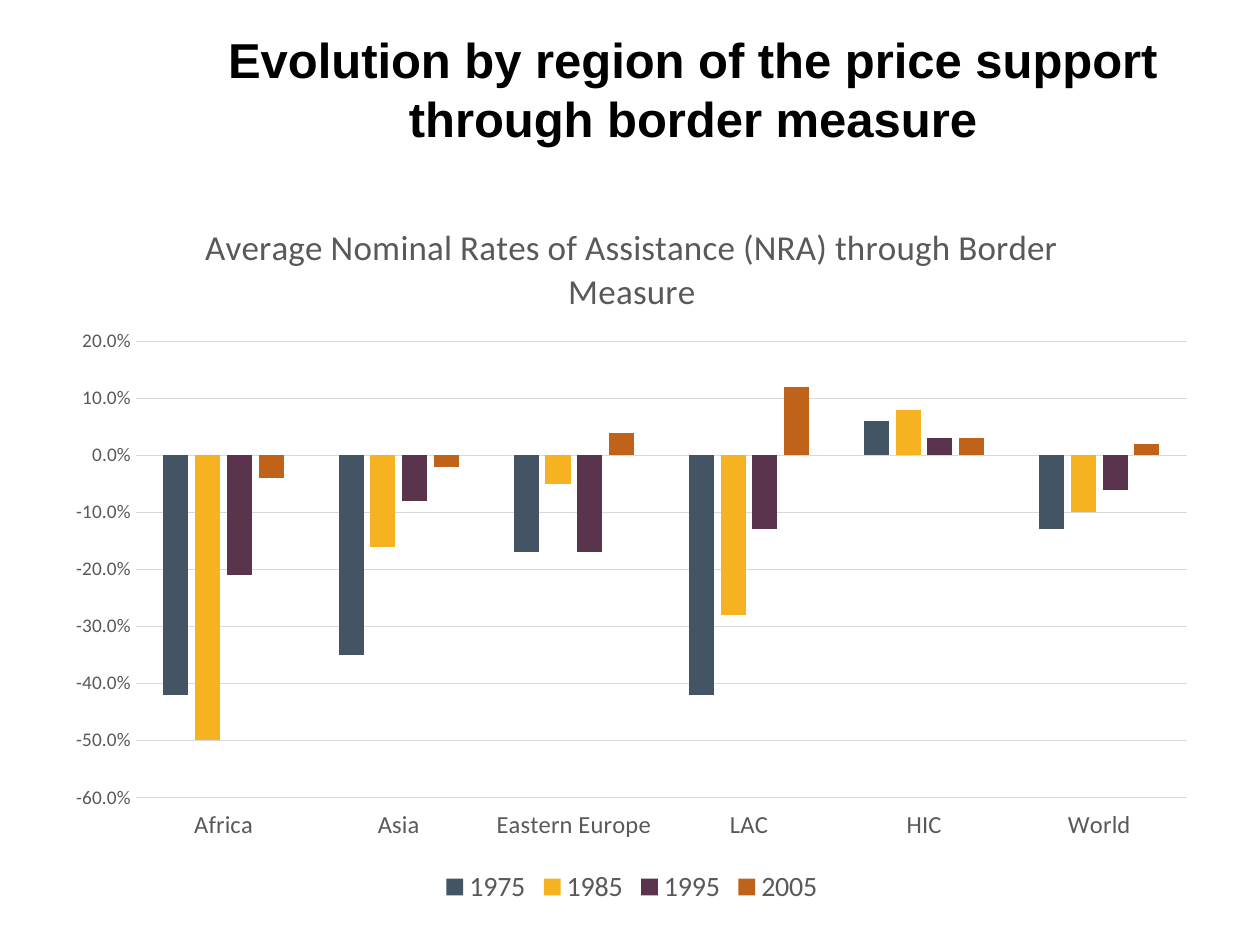
from pptx import Presentation
from pptx.chart.data import CategoryChartData
from pptx.dml.color import RGBColor
from pptx.enum.chart import XL_CHART_TYPE as ChartType, XL_LEGEND_POSITION as LegendPosition
from pptx.enum.chart import XL_TICK_LABEL_POSITION as LabelPosition, XL_TICK_MARK as TickMark
from pptx.enum.text import MSO_ANCHOR as Anchor, PP_ALIGN as Align
from pptx.oxml import parse_xml
from pptx.oxml.ns import nsdecls, qn
from pptx.util import Inches, Pt

BLACK = RGBColor(0x00, 0x00, 0x00)
GREY = RGBColor(0x59, 0x59, 0x59)
RULE = RGBColor(0xD9, 0xD9, 0xD9)
REGIONS = ["Africa", "Asia", "Eastern Europe", "LAC", "HIC", "World"]
ASSISTANCE = [
    ("1975", RGBColor(0x43, 0x54, 0x64), [-0.42, -0.35, -0.17, -0.42, 0.06, -0.13]),
    ("1985", RGBColor(0xF6, 0xB2, 0x21), [-0.5, -0.16, -0.05, -0.28, 0.08, -0.1]),
    ("1995", RGBColor(0x5A, 0x34, 0x4D), [-0.21, -0.08, -0.17, -0.13, 0.03, -0.06]),
    ("2005", RGBColor(0xBF, 0x63, 0x1A), [-0.04, -0.02, 0.04, 0.12, 0.03, 0.02]),
]


def style_font(font, size, color=GREY, name="Calibri", bold=False):
    """Set the size, colour, typeface and weight of a font."""
    font.size, font.name, font.bold = Pt(size), name, bold
    font.color.rgb = color


def style_line(line):
    """Make a chart line a thin light rule."""
    line.color.rgb = RULE
    line.width = Pt(0.75)


def place_title(page, box):
    """Put the heading in the title placeholder, inside the given box."""
    title = page.shapes.title
    title.left, title.top, title.width, title.height = box
    frame = title.text_frame
    frame.word_wrap = True
    frame.vertical_anchor = Anchor.MIDDLE
    frame.margin_left = frame.margin_right = Inches(0.1)
    frame.margin_top = frame.margin_bottom = Inches(0.02)
    frame.text = "Evolution by region of the price support through border measure"
    para = frame.paragraphs[0]
    para.alignment = Align.CENTER
    style_font(para.font, 28, BLACK, "Arial", True)


def style_axes(chart):
    """Format the region axis and the percentage axis."""
    regions, rates = chart.category_axis, chart.value_axis
    for axis, size in ((regions, 14), (rates, 11)):
        axis.major_tick_mark = axis.minor_tick_mark = TickMark.NONE
        style_font(axis.tick_labels.font, size)
    regions.tick_label_position = LabelPosition.LOW
    style_line(regions.format.line)
    rates.minimum_scale, rates.maximum_scale, rates.major_unit = -0.6, 0.2, 0.1
    rates.tick_labels.number_format = "0.0%"
    rates.tick_labels.number_format_is_linked = False
    rates.format.line.fill.background()
    style_line(rates.major_gridlines.format.line)


def fix_plot_area(chart, **shares):
    """Place the inner plot area by shares of the chart's size."""
    area = chart.plots[0]._element.getparent()
    for layout in area.findall(qn("c:layout")):
        area.remove(layout)
    places = "".join(f'<c:{key} val="{share}"/>' for key, share in shares.items())
    area.insert(0, parse_xml(
        f'<c:layout {nsdecls("c")}><c:manualLayout><c:layoutTarget val="inner"/>'
        f'<c:xMode val="edge"/><c:yMode val="edge"/>{places}</c:manualLayout></c:layout>'))


def place_chart(page, box):
    """Draw the clustered columns of assistance by region, inside the given box."""
    data = CategoryChartData(number_format="0.0%")
    data.categories = REGIONS
    for year, _, rates in ASSISTANCE:
        data.add_series(year, rates)
    chart = page.shapes.add_chart(ChartType.COLUMN_CLUSTERED, *box, data).chart
    style_font(chart.font, 10, BLACK)

    chart.has_title = True
    frame = chart.chart_title.text_frame
    frame.text = "Average Nominal Rates of Assistance (NRA) through Border Measure"
    style_font(frame.paragraphs[0].font, 20)
    chart.chart_title.include_in_layout = False

    chart.has_legend = True
    chart.legend.position = LegendPosition.BOTTOM
    chart.legend.include_in_layout = False
    style_font(chart.legend.font, 16)

    plot = chart.plots[0]
    plot.gap_width, plot.overlap, plot.vary_by_categories = 219, -27, False
    for series, (_, color, _) in zip(plot.series, ASSISTANCE):
        series.invert_if_negative = False
        series.format.fill.solid()
        series.format.fill.fore_color.rgb = color
    style_axes(chart)
    _, _, width, height = box
    fix_plot_area(chart, x=Inches(0.66) / width, y=Inches(1.16) / height,
                  w=Inches(8.34) / width, h=Inches(3.62) / height)


def main():
    """Build the slide and save the deck."""
    deck = Presentation()
    deck.slide_width, deck.slide_height = Inches(10), Inches(7.5)
    page = deck.slides.add_slide(deck.slide_layouts[5])
    place_title(page, (Inches(1), Inches(0.23), Inches(9), Inches(0.95)))
    place_chart(page, (Inches(0.42), Inches(1.55), Inches(9.19), Inches(5.67)))
    deck.save("out.pptx")


if __name__ == "__main__":
    main()
